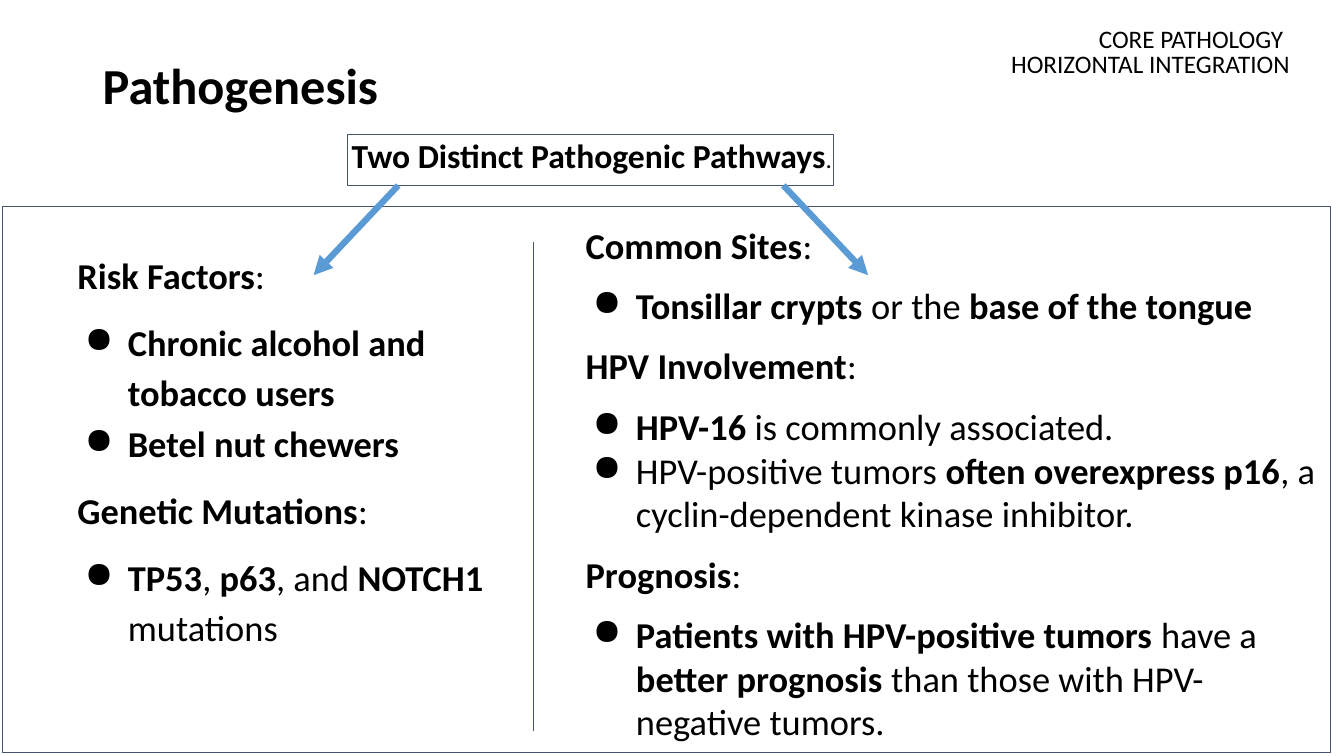
from lxml.etree import SubElement
from pptx import Presentation
from pptx.dml.color import RGBColor
from pptx.enum.shapes import MSO_CONNECTOR, MSO_SHAPE
from pptx.enum.text import MSO_ANCHOR
from pptx.oxml.ns import qn
from pptx.util import Inches, Pt

BLACK = RGBColor(0x00, 0x00, 0x00)
WHITE = RGBColor(0xFF, 0xFF, 0xFF)
SLATE = RGBColor(0x44, 0x54, 0x6A)
BLUE = RGBColor(0x5B, 0x9B, 0xD5)
FONT = "Calibri"

RISK_COLUMN = [
    ("Risk Factors", ["**Chronic alcohol and tobacco users**", "**Betel nut chewers**"]),
    ("Genetic Mutations", ["**TP53**, **p63**, and **NOTCH1** mutations"]),
]
HPV_COLUMN = [
    ("Common Sites", ["**Tonsillar crypts** or the **base of the tongue**"]),
    ("HPV Involvement", [
        "**HPV-16** is commonly associated.",
        "HPV-positive tumors **often overexpress p16**, a cyclin-dependent kinase inhibitor.",
    ]),
    ("Prognosis", [
        "**Patients with HPV-positive tumors** have a **better prognosis** "
        "than those with HPV-negative tumors.",
    ]),
]


def add_panel(slide, left, top, width, height):
    panel = slide.shapes.add_shape(
        MSO_SHAPE.RECTANGLE, Inches(left), Inches(top), Inches(width), Inches(height))
    panel.shadow.inherit = False
    panel.fill.solid()
    panel.fill.fore_color.rgb = WHITE
    panel.line.color.rgb = SLATE
    panel.line.width = Pt(0.75)


def add_line(slide, start, end, color, weight, arrow=False):
    line = slide.shapes.add_connector(
        MSO_CONNECTOR.STRAIGHT, *(Inches(value) for value in (*start, *end)))
    line.line.color.rgb = color
    line.line.width = Pt(weight)
    properties = line.line._get_or_add_ln()
    if arrow:
        SubElement(properties, qn("a:tailEnd"), type="triangle")
    SubElement(line._element.spPr, qn("a:effectLst"))


def add_frame(slide, left, top, width, height):
    frame = slide.shapes.add_textbox(
        Inches(left), Inches(top), Inches(width), Inches(height)).text_frame
    frame.word_wrap = True
    return frame


def add_run(paragraph, text, size, bold=False):
    run = paragraph.add_run()
    run.text = text
    run.font.name = FONT
    run.font.size = Pt(size)
    run.font.bold = bold
    run.font.color.rgb = BLACK


def add_marked_text(paragraph, text, size):
    for position, part in enumerate(text.split("**")):
        if part:
            add_run(paragraph, part, size, bold=position % 2 == 1)


def add_bullet(paragraph):
    properties = paragraph._p.get_or_add_pPr()
    properties.set("marL", str(Inches(0.5)))
    properties.set("indent", str(Inches(-0.43)))
    color = SubElement(properties, qn("a:buClr"))
    SubElement(color, qn("a:srgbClr"), val=str(BLACK))
    SubElement(properties, qn("a:buChar"), char="●")


def add_header(slide, left, top, width, height):
    title = add_frame(slide, left, top, width, height)
    title.vertical_anchor = MSO_ANCHOR.MIDDLE
    title.paragraphs[0].line_spacing = 0.9
    add_run(title.paragraphs[0], "Pathogenesis", 36, bold=True)
    course = add_frame(slide, left + 9.88, top + 0.03, 2.4, 0.4)
    add_run(course.paragraphs[0], "CORE PATHOLOGY", 18)
    strand = add_frame(slide, left + 9.01, top + 0.28, 3.02, 0.4)
    add_run(strand.paragraphs[0], "HORIZONTAL INTEGRATION", 18)


def add_pathways(slide, left, top, width, height):
    add_panel(slide, left, top, width, height)
    heading = add_frame(slide, left - 0.06, top - 0.04, width + 0.45, 0.81).paragraphs[0]
    add_run(heading, "Two Distinct Pathogenic Pathways", 24, bold=True)
    add_run(heading, ".", 18)
    bottom, center = top + height, left + width / 2
    for side in (-1, 1):
        add_line(slide, (center + side * 1.91, bottom),
                 (center + side * 2.75, bottom + 0.89), BLUE, 4.5, arrow=True)


def add_column(slide, left, top, width, height, sections, line_spacing):
    frame = add_frame(slide, left, top, width, height)
    paragraph = frame.paragraphs[0]
    for section, (heading, points) in enumerate(sections):
        if section:
            paragraph = frame.add_paragraph()
        paragraph.line_spacing = line_spacing
        paragraph.space_before = Pt(12)
        add_marked_text(paragraph, f"**{heading}**:", 26)
        for order, point in enumerate(points):
            paragraph = frame.add_paragraph()
            paragraph.line_spacing = line_spacing
            paragraph.space_before = Pt(0 if order else 12)
            add_bullet(paragraph)
            add_marked_text(paragraph, point, 26)


def add_comparison(slide, left, top, width, height):
    add_panel(slide, left, top, width, height)
    add_column(slide, left + 0.64, top + 0.35, 4.63, 4.06, RISK_COLUMN, 1.15)
    add_column(slide, left + 5.68, top + 0.11, 7.54, 5.32, HPV_COLUMN, 1.0)
    divider = left + 5.26
    add_line(slide, (divider, top + 0.35), (divider, top + 5.2), SLATE, 0.75)


def main():
    presentation = Presentation()
    presentation.slide_width = Inches(13.33)
    presentation.slide_height = Inches(7.5)
    slide = presentation.slides.add_slide(presentation.slide_layouts[6])
    add_comparison(slide, 0.03, 2.05, 13.17, 5.42)
    add_header(slide, 0.92, 0.15, 11.5, 1.45)
    add_pathways(slide, 3.45, 1.33, 4.82, 0.51)
    presentation.save("out.pptx")


if __name__ == "__main__":
    main()
